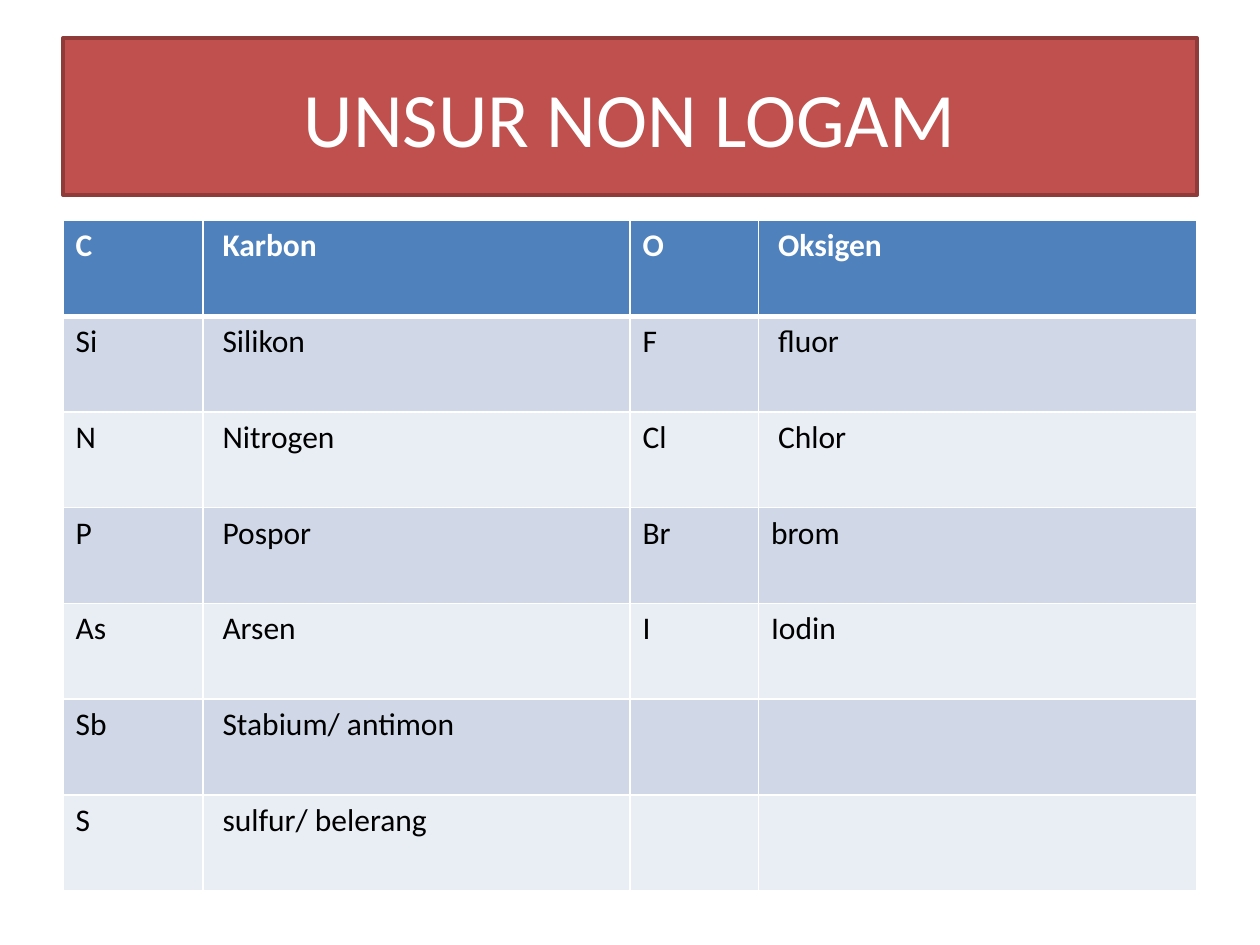
from dataclasses import dataclass

from lxml import etree
from pptx import Presentation
from pptx.dml.color import RGBColor
from pptx.enum.text import MSO_ANCHOR, PP_ALIGN
from pptx.oxml.ns import qn
from pptx.util import Inches, Pt

MIDDLE = MSO_ANCHOR.MIDDLE
CENTER = PP_ALIGN.CENTER
TITLE_ONLY = 5
FONT = "Calibri"
COLORS = {
    "white": "FFFFFF",
    "black": "000000",
    "title": "C0504D",
    "title_line": "8E3B39",
    "header": "4F81BD",
    "band_dark": "D0D8E8",
    "band_light": "E9EDF4",
}
LEFT, WIDTH = 0.5, 9
TABLE_TOP, ROW_HEIGHT = 1.75, 0.76
COLUMN_WIDTHS = (1.11, 3.39, 1.02, 3.48)
THIN, THICK = 1, 3


@dataclass(frozen=True)
class RowStyle:
    fill: str
    text: str
    bold: bool
    top: int
    bottom: int


ELEMENTS = (
    ("C", " Karbon", "O", " Oksigen"),
    ("Si", " Silikon", "F", " fluor"),
    ("N", " Nitrogen", "Cl", " Chlor"),
    ("P", " Pospor", "Br", "brom"),
    ("As", " Arsen", "I", "Iodin"),
    ("Sb", " Stabium/ antimon", "", ""),
    ("S", " sulfur/ belerang", "", ""),
)


def rgb(name: str) -> RGBColor:
    return RGBColor.from_string(COLORS[name])


def add_run(para, text: str, size: float, color: str, bold: bool = False) -> None:
    span = para.add_run()
    span.text = text
    span.font.name = FONT
    span.font.size = Pt(size)
    span.font.bold = bold
    span.font.color.rgb = rgb(color)


def style_for(row: int) -> RowStyle:
    if row == 0:
        return RowStyle("header", "white", True, THIN, THICK)
    fill = "band_dark" if row % 2 else "band_light"
    return RowStyle(fill, "black", False, THICK if row == 1 else THIN, THIN)


def set_borders(cell, top: int, bottom: int) -> None:
    """Draw white cell edges; call before filling, as the schema puts lines first."""
    properties = cell._tc.get_or_add_tcPr()
    edges = {"a:lnL": THIN, "a:lnR": THIN, "a:lnT": top, "a:lnB": bottom}
    for tag, width in edges.items():
        line = etree.SubElement(properties, qn(tag), w=str(Pt(width)))
        fill = etree.SubElement(line, qn("a:solidFill"))
        etree.SubElement(fill, qn("a:srgbClr"), val=COLORS["white"])


def add_title(page, text: str) -> None:
    box = page.shapes.title
    box.left, box.top = Inches(LEFT), Inches(0.3)
    box.width, box.height = Inches(WIDTH), Inches(1.25)
    box.fill.solid()
    box.fill.fore_color.rgb = rgb("title")
    box.line.color.rgb = rgb("title_line")
    box.line.width = Pt(2)
    box.text_frame.vertical_anchor = MIDDLE
    para = box.text_frame.paragraphs[0]
    para.alignment = CENTER
    add_run(para, text, 44, "white")


def add_element_table(page) -> None:
    table = page.shapes.add_table(
        len(ELEMENTS), len(COLUMN_WIDTHS), Inches(LEFT), Inches(TABLE_TOP),
        Inches(WIDTH), Inches(ROW_HEIGHT * len(ELEMENTS)),
    ).table
    for column, width in zip(table.columns, COLUMN_WIDTHS):
        column.width = Inches(width)
    for row, texts in enumerate(ELEMENTS):
        table.rows[row].height = Inches(ROW_HEIGHT)
        style = style_for(row)
        for column, text in enumerate(texts):
            cell = table.cell(row, column)
            set_borders(cell, style.top, style.bottom)
            cell.fill.solid()
            cell.fill.fore_color.rgb = rgb(style.fill)
            if text:
                add_run(cell.text_frame.paragraphs[0], text, 18, style.text, style.bold)


def main() -> None:
    deck = Presentation()
    deck.slide_width, deck.slide_height = Inches(10), Inches(7.5)
    page = deck.slides.add_slide(deck.slide_layouts[TITLE_ONLY])
    add_title(page, "UNSUR NON LOGAM")
    add_element_table(page)
    deck.save("out.pptx")


if __name__ == "__main__":
    main()
